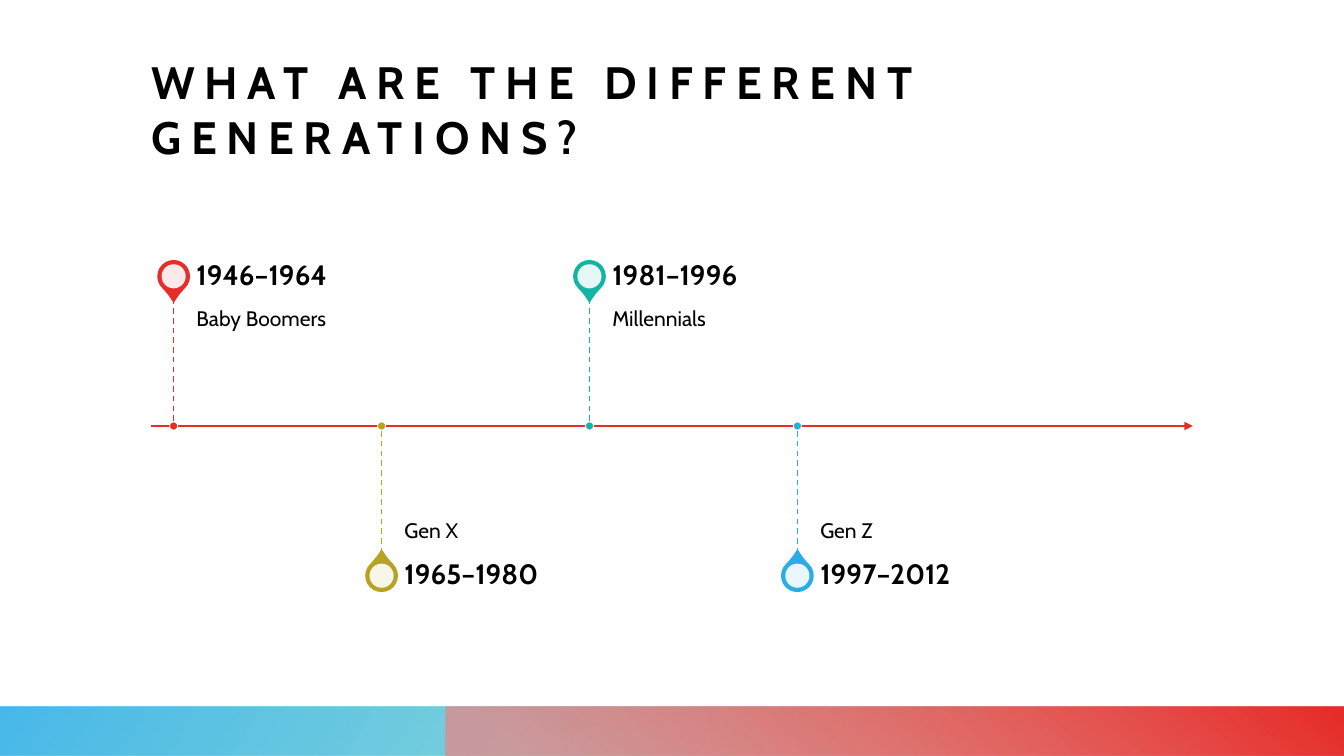
from dataclasses import dataclass

from lxml import etree
from pptx import Presentation
from pptx.dml.color import RGBColor
from pptx.enum.dml import MSO_LINE
from pptx.enum.shapes import MSO_CONNECTOR, MSO_SHAPE
from pptx.enum.text import MSO_ANCHOR, MSO_AUTO_SIZE, PP_ALIGN
from pptx.oxml.ns import qn
from pptx.util import Inches, Pt

RECT, OVAL, TEAR = MSO_SHAPE.RECTANGLE, MSO_SHAPE.OVAL, MSO_SHAPE.TEAR
STRAIGHT, DASH = MSO_CONNECTOR.STRAIGHT, MSO_LINE.DASH
TOP, MIDDLE, BOTTOM = MSO_ANCHOR.TOP, MSO_ANCHOR.MIDDLE, MSO_ANCHOR.BOTTOM
LEFT, NO_FIT = PP_ALIGN.LEFT, MSO_AUTO_SIZE.NONE
TITLE_ONLY = 5


@dataclass(frozen=True)
class Theme:
    font: str = "Cabin"
    text: str = "000000"
    white: str = "FFFFFF"
    red: str = "E72D29"
    pink: str = "F1817F"
    olive: str = "B8A221"
    teal: str = "14B4A3"
    blue: str = "29ADE7"
    title: float = 32.4
    date: float = 20
    label: float = 15


class TimelineSlide:
    """Draws on one slide, with lengths in hundredths of its width and height."""

    AXIS, HEAD, STEM = 56.35, 19.8, 16.85

    def __init__(self, prs, theme):
        self.prs, self.theme = prs, theme
        self.s = prs.slides.add_slide(prs.slide_layouts[TITLE_ONLY])

    def col(self, n):
        return round(self.prs.slide_width * n / 100)

    def row(self, n):
        return round(self.prs.slide_height * n / 100)

    def box(self, x, y, w, h):
        return self.col(x), self.row(y), self.col(w), self.row(h)

    def format(self, tf, size, bold, anchor, spacing=None):
        tf.word_wrap, tf.auto_size, tf.vertical_anchor = True, NO_FIT, anchor
        tf.margin_left = tf.margin_right = tf.margin_top = tf.margin_bottom = 0
        p = tf.paragraphs[0]
        p.alignment, p.line_spacing = LEFT, spacing
        r = p.runs[0]
        r.font.name, r.font.size, r.font.bold = self.theme.font, Pt(size), bold
        r.font.color.rgb = RGBColor.from_string(self.theme.text)
        return r

    def title(self, text, *place):
        sp = self.s.shapes.title
        sp.left, sp.top, sp.width, sp.height = self.box(*place)
        sp.text_frame.text = text
        r = self.format(sp.text_frame, self.theme.title, True, BOTTOM)
        r.font._element.set("spc", "700")

    def text(self, text, place, size, bold=False, anchor=MIDDLE, pad=(0, 0)):
        tf = self.s.shapes.add_textbox(*self.box(*place)).text_frame
        tf.text = text
        self.format(tf, size, bold, anchor, 0.9)
        tf.margin_top, tf.margin_bottom = map(self.row, pad)

    def opacity(self, sp, *shares):
        for color, share in zip(sp._element.spPr.iter(qn("a:srgbClr")), shares):
            etree.SubElement(color, qn("a:alpha"), val=str(share * 1000))

    def band(self, x, stops, angle, rotation=0):
        sp = self.s.shapes.add_shape(RECT, *self.box(x, 93.45, 100 - x, 6.55))
        sp.shadow.inherit = False
        sp.rotation = rotation
        sp._element.spPr.xfrm.set("flipH", "1")
        sp.fill.gradient()
        sp.fill.gradient_angle = 360 - angle
        for stop, (position, color, _) in zip(sp.fill.gradient_stops, stops):
            stop.position = position / 100
            stop.color.rgb = RGBColor.from_string(color)
        self.opacity(sp, *(share for _, _, share in stops))
        sp.line.fill.background()

    def dot(self, kind, x, y, size, fill, line=None, width=1):
        w, h = self.col(size), self.col(size)
        sp = self.s.shapes.add_shape(kind, self.col(x) - w // 2, self.row(y) - h // 2, w, h)
        sp.shadow.inherit = False
        sp.fill.solid()
        sp.fill.fore_color.rgb = RGBColor.from_string(fill)
        if line:
            sp.line.color.rgb = RGBColor.from_string(line)
            sp.line.width = Pt(width)
        else:
            sp.line.fill.background()
        return sp

    def line(self, x1, y1, x2, y2, color, width, dash=None, arrow=False):
        ln = self.s.shapes.add_connector(
            STRAIGHT, self.col(x1), self.row(y1), self.col(x2), self.row(y2))
        ln.line.color.rgb = RGBColor.from_string(color)
        ln.line.width = Pt(width)
        if dash:
            ln.line.dash_style = dash
        if arrow:
            etree.SubElement(ln.line._get_or_add_ln(), qn("a:tailEnd"), type="triangle")
        etree.SubElement(ln._element.spPr, qn("a:effectLst"))

    def milestone(self, x, above, date, name, color):
        t, side = self.theme, -1 if above else 1
        head, tip = self.AXIS + side * self.HEAD, self.AXIS + side * self.STEM
        pin = self.dot(TEAR, x, head, 2.33, color, color)
        pin.adjustments[0] = 1.15
        pin.rotation = 135 if above else 315
        self.opacity(self.dot(OVAL, x, head, 1.8, t.white), 90)
        self.text(name, (x + 1.7, min(tip, self.AXIS), 25.8, self.STEM), t.label,
                  anchor=TOP if above else BOTTOM,
                  pad=(1.33, 2.13) if above else (2.13, 1.33))
        self.text(date, (x + 1.7, head - 2.95, 25.8, 5.9), t.date, bold=True)
        self.line(x, tip, x, self.AXIS, color, 1, DASH)
        self.dot(OVAL, x, self.AXIS, 0.6, color, t.white, 0.5)


def main():
    prs = Presentation()
    prs.slide_width, prs.slide_height = Inches(13.33), Inches(7.5)
    t = Theme()
    slide = TimelineSlide(prs, t)
    slide.title("WHAT ARE THE DIFFERENT GENERATIONS?", 11.25, 6.93, 77.5, 14.67)
    slide.band(0, [(14, t.teal, 28), (100, t.blue, 85)], 150, rotation=180)
    slide.band(33.13, [(9, t.pink, 68), (99, t.red, 100)], 230)
    slide.line(11.25, slide.AXIS, 88.75, slide.AXIS, t.red, 1.5, arrow=True)
    generations = [
        ("1946–1964", "Baby Boomers", t.red),
        ("1965–1980", "Gen X", t.olive),
        ("1981–1996", "Millennials", t.teal),
        ("1997–2012", "Gen Z", t.blue),
    ]
    for i, (date, name, color) in enumerate(generations):
        slide.milestone(12.92 + i * 15.47, i % 2 == 0, date, name, color)
    prs.save("out.pptx")


if __name__ == "__main__":
    main()
